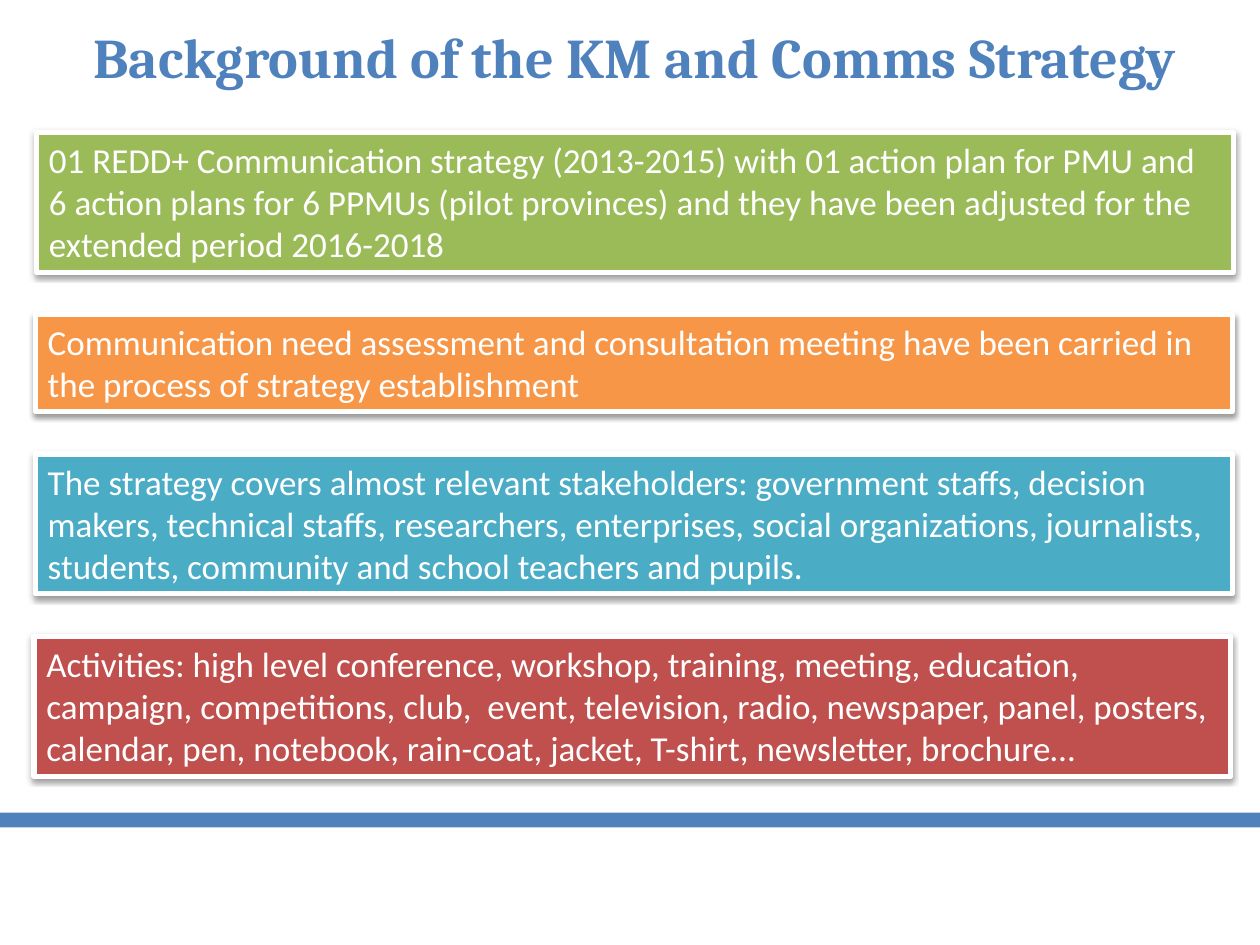
from lxml.etree import SubElement
from pptx import Presentation
from pptx.dml.color import RGBColor
from pptx.enum.shapes import MSO_SHAPE
from pptx.enum.text import MSO_ANCHOR, MSO_AUTO_SIZE, PP_ALIGN
from pptx.oxml.ns import qn
from pptx.util import Pt

BLUE, WHITE = "4F81BD", "FFFFFF"
TITLE = "Background of the KM and Comms Strategy"
PANEL_TOP, PANEL_WIDTH, PANEL_GAP = 75.6, 684, 24.2
PANELS = [
    (20.9, 80, "9BBB59",
     "01 REDD+ Communication strategy (2013-2015) with 01 action plan for PMU and "
     "6 action plans for 6 PPMUs (pilot provinces) and they have been adjusted for "
     "the extended period 2016-2018"),
    (20.2, 55.4, "F79646",
     "Communication need assessment and consultation meeting have been carried in "
     "the process of strategy establishment"),
    (20.2, 80, "4BACC6",
     "The strategy covers almost relevant stakeholders: government staffs, decision "
     "makers, technical staffs, researchers, enterprises, social organizations, "
     "journalists, students, community and school teachers and pupils."),
    (19.4, 80, "C0504D",
     "Activities: high level conference, workshop, training, meeting, education, "
     "campaign, competitions, club,  event, television, radio, newspaper, panel, "
     "posters, calendar, pen, notebook, rain-coat, jacket, T-shirt, newsletter, "
     "brochure…"),
]


def colour(hex_string):
    """Return the RGB colour for a hex string."""
    return RGBColor.from_string(hex_string)


def set_font(paragraph, name, size, hex_string, bold=False):
    """Set the font of a whole paragraph."""
    font = paragraph.font
    font.name, font.size, font.bold = name, Pt(size), bold
    font.color.rgb = colour(hex_string)


def add_rectangle(page, left, top, width, height, fill):
    """Add a plain filled rectangle without outline or shadow."""
    box = page.shapes.add_shape(
        MSO_SHAPE.RECTANGLE, Pt(left), Pt(top), Pt(width), Pt(height))
    box.shadow.inherit = False
    box.fill.solid()
    box.fill.fore_color.rgb = colour(fill)
    box.line.fill.background()
    return box


def add_soft_shadow(box):
    """Give a shape a soft black shadow straight below it."""
    effects = box._element.spPr.find(qn("a:effectLst"))
    shadow = SubElement(
        effects, qn("a:outerShdw"), blurRad=str(Pt(3.1)), dist=str(Pt(1.6)),
        dir="5400000", rotWithShape="0")
    black = SubElement(shadow, qn("a:srgbClr"), val="000000")
    SubElement(black, qn("a:alpha"), val="38000")


def place_title(page, left, top, width, height):
    """Move and format the title placeholder."""
    title = page.shapes.title
    title.left, title.top = Pt(left), Pt(top)
    title.width, title.height = Pt(width), Pt(height)
    frame = title.text_frame
    frame.text = TITLE
    frame.vertical_anchor = MSO_ANCHOR.MIDDLE
    frame.auto_size = MSO_AUTO_SIZE.NONE
    paragraph = frame.paragraphs[0]
    paragraph.alignment = PP_ALIGN.CENTER
    set_font(paragraph, "Cambria", 32, BLUE, bold=True)


def add_panel(page, left, top, width, height, fill, text):
    """Add a coloured statement panel with a white border."""
    panel = add_rectangle(page, left, top, width, height, fill)
    panel.line.color.rgb = colour(WHITE)
    panel.line.width = Pt(3)
    add_soft_shadow(panel)
    frame = panel.text_frame
    frame.text = text
    frame.word_wrap = True
    frame.auto_size = MSO_AUTO_SIZE.SHAPE_TO_FIT_TEXT
    frame.vertical_anchor = MSO_ANCHOR.TOP
    paragraph = frame.paragraphs[0]
    paragraph.alignment = PP_ALIGN.LEFT
    set_font(paragraph, "Calibri", 20, WHITE)


def add_panels(page, top, width, gap):
    """Stack the panels downwards with equal gaps."""
    for left, height, fill, text in PANELS:
        add_panel(page, left, top, width, height, fill, text)
        top += height + gap


def main():
    """Build the slide and save the deck."""
    deck = Presentation()
    deck.slide_width, deck.slide_height = Pt(720), Pt(540)
    page = deck.slides.add_slide(deck.slide_layouts[5])
    add_rectangle(page, 0, 464.4, 720, 8.4, BLUE)
    place_title(page, 20.9, 12.2, 684, 39.6)
    add_panels(page, PANEL_TOP, PANEL_WIDTH, PANEL_GAP)
    deck.save("out.pptx")


if __name__ == "__main__":
    main()
